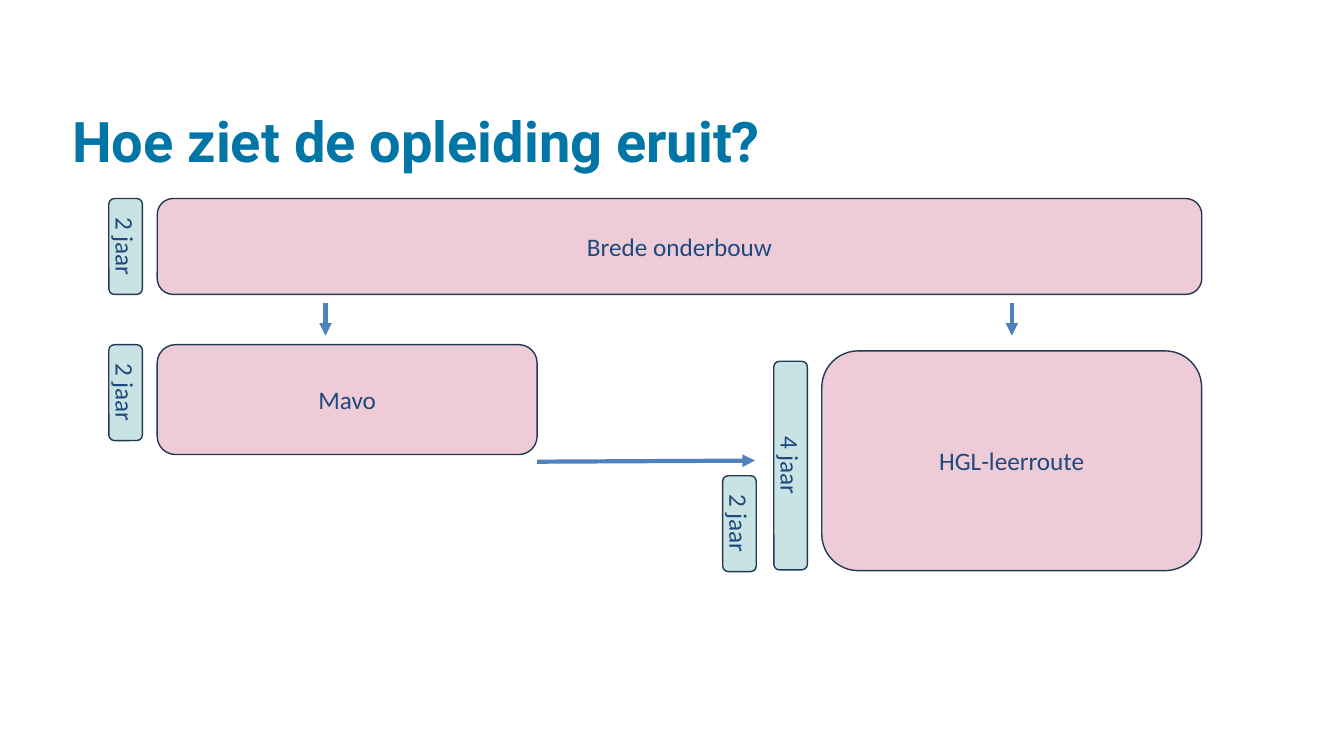
"""Build the slide that shows the routes through the school programme."""
from dataclasses import dataclass

from pptx import Presentation
from pptx.dml.color import RGBColor
from pptx.enum import shapes, text
from pptx.oxml import xmlchemy
from pptx.slide import Slide
from pptx.util import Pt

WHITE = RGBColor(0xFF, 0xFF, 0xFF)
TITLE_BLUE = RGBColor(0x00, 0x75, 0xA6)
PINK = RGBColor(0xEE, 0xCC, 0xD7)
MINT = RGBColor(0xC9, 0xE3, 0xE4)
OUTLINE = RGBColor(0x23, 0x39, 0x53)
LABEL_BLUE = RGBColor(0x1F, 0x49, 0x7D)
ARROW_BLUE = RGBColor(0x4F, 0x81, 0xBD)

PHASE_LEFT, PHASE_WIDTH = 112.3, 271.4
ROUTE_LEFT = 587
DURATION_WIDTH, DURATION_HEIGHT = 24, 68.5
YEARS_LEFT = 77.7
FIRST_ROW, SECOND_ROW = 141.8, 246.2


@dataclass(frozen=True)
class Panel:
    """A rounded box, given by its bounds as they appear on the page."""
    label: str
    left: float
    top: float
    width: float
    height: float
    fill: RGBColor = PINK
    upright: bool = True


@dataclass(frozen=True)
class Arrow:
    """A straight arrow between two points."""
    start: tuple[float, float]
    end: tuple[float, float]


def duration(label: str, left: float, top: float, height: float = DURATION_HEIGHT) -> Panel:
    """Describe a narrow panel whose text runs downwards."""
    return Panel(label, left, top, DURATION_WIDTH, height, MINT, upright=False)


PANELS = [
    Panel("Brede onderbouw", PHASE_LEFT, FIRST_ROW, ROUTE_LEFT + PHASE_WIDTH - PHASE_LEFT, 68.5),
    Panel("Mavo", PHASE_LEFT, SECOND_ROW, PHASE_WIDTH, 78.5),
    Panel("HGL-leerroute", ROUTE_LEFT, 250.6, PHASE_WIDTH, 157),
    duration("2 jaar", YEARS_LEFT, FIRST_ROW),
    duration("2 jaar", YEARS_LEFT, SECOND_ROW),
    duration("4 jaar", 552.7, 258.1, 149),
    duration("2 jaar", 516.2, 339.8),
]
ARROWS = [
    Arrow((232.5, 216.7), (232.5, 239.8)),
    Arrow((722.8, 216.7), (722.8, 239.8)),
    Arrow((383.7, 329.8), (539.3, 329)),
]


def draw_title(page: Slide, wording: str) -> None:
    """Place the slide title."""
    box = page.shapes.add_textbox(Pt(44.6), Pt(77.8), Pt(828), Pt(104.4))
    box.fill.solid()
    box.fill.fore_color.rgb = WHITE
    box.text_frame.word_wrap = True
    para = box.text_frame.paragraphs[0]
    para.text = wording
    para.line_spacing = 0.9
    para.font.name, para.font.size, para.font.bold = "Roboto", Pt(40), True
    para.font.color.rgb = TITLE_BLUE


def draw_panel(page: Slide, panel: Panel) -> None:
    """Draw a rounded panel, turned a quarter when it is not upright."""
    width, height = (panel.width, panel.height) if panel.upright else (panel.height, panel.width)
    left = panel.left + (panel.width - width) / 2
    top = panel.top + (panel.height - height) / 2
    box = page.shapes.add_shape(
        shapes.MSO_SHAPE.ROUNDED_RECTANGLE, Pt(left), Pt(top), Pt(width), Pt(height))
    box.rotation = 0 if panel.upright else 90
    box.shadow.inherit = False
    box.fill.solid()
    box.fill.fore_color.rgb = panel.fill
    box.line.color.rgb = OUTLINE
    box.line.width = Pt(1)
    box.text_frame.word_wrap = True
    box.text_frame.vertical_anchor = text.MSO_ANCHOR.MIDDLE
    para = box.text_frame.paragraphs[0]
    para.text = panel.label
    para.alignment = text.PP_ALIGN.CENTER
    para.font.name, para.font.size = "Calibri", Pt(18)
    para.font.color.rgb = LABEL_BLUE


def draw_arrow(page: Slide, arrow: Arrow) -> None:
    """Draw a straight line with a triangular head at its end."""
    line = page.shapes.add_connector(
        shapes.MSO_CONNECTOR.STRAIGHT, *map(Pt, arrow.start), *map(Pt, arrow.end))
    line.line.color.rgb = ARROW_BLUE
    line.line.width = Pt(3)
    head = xmlchemy.OxmlElement("a:tailEnd")
    head.set("type", "triangle")
    line.line._get_or_add_ln().append(head)
    line._element.spPr.append(xmlchemy.OxmlElement("a:effectLst"))


def main() -> None:
    """Build and save the deck."""
    deck = Presentation()
    deck.slide_width, deck.slide_height = Pt(960), Pt(540)
    page = deck.slides.add_slide(deck.slide_layouts[6])
    draw_title(page, "Hoe ziet de opleiding eruit?")
    for panel in PANELS:
        draw_panel(page, panel)
    for arrow in ARROWS:
        draw_arrow(page, arrow)
    deck.save("out.pptx")


if __name__ == "__main__":
    main()
